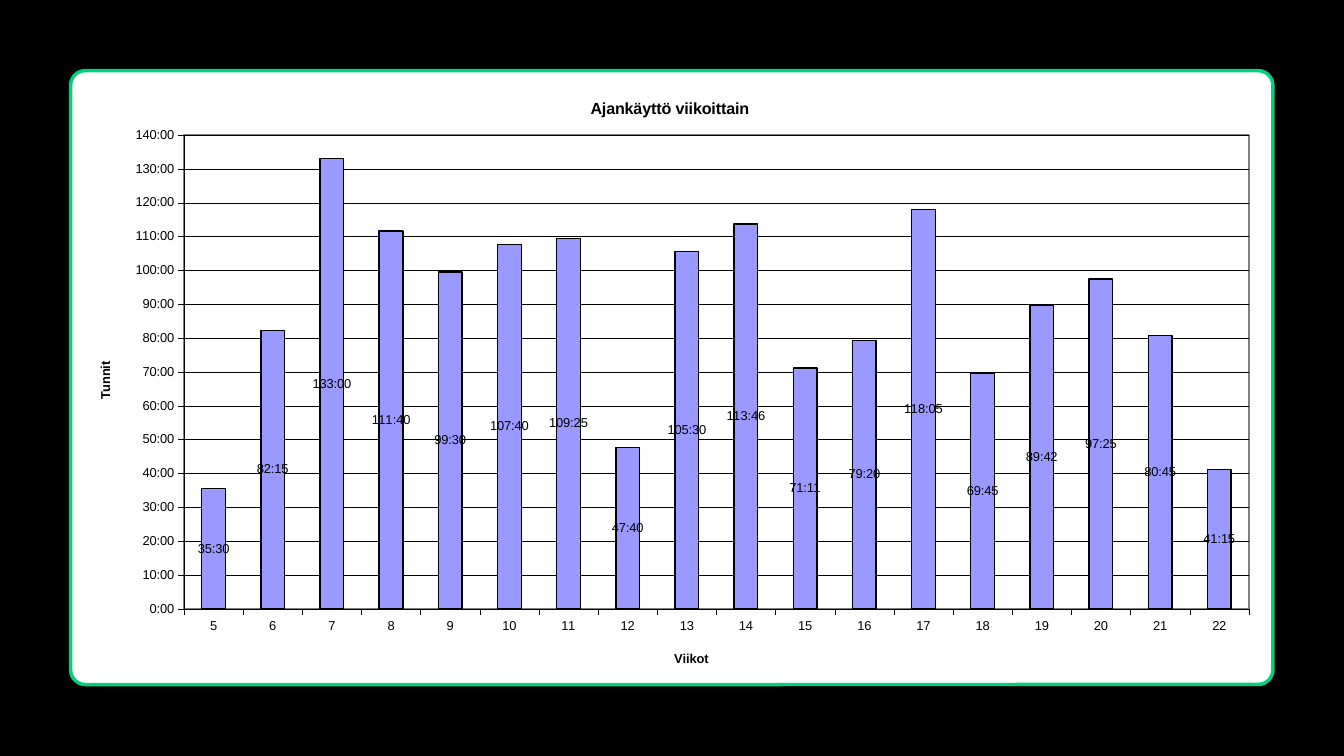
"""Build a slide with a column chart of the hours used each week."""
from typing import NamedTuple

from pptx import Presentation
from pptx.chart.data import CategoryChartData
from pptx.dml.color import RGBColor
from pptx.enum.chart import XL_CHART_TYPE as ChartType, XL_TICK_MARK as TickMark
from pptx.enum.shapes import MSO_SHAPE as Preset
from pptx.oxml import parse_xml
from pptx.oxml.ns import nsdecls, qn
from pptx.util import Cm, Pt

BLACK = "000000"
FRAME = (Cm(1.78), Cm(1.78), Cm(30.3), Cm(15.47))
HOUR_FORMAT = "[h]:mm"
TEXT_SIZE = 9.2
TIMES = (
    "35:30 82:15 133:00 111:40 99:30 107:40 109:25 47:40 105:30 "
    "113:46 71:11 79:20 118:05 69:45 89:42 97:25 80:45 41:15"
).split()
FIRST_WEEK = 5


class Heading(NamedTuple):
    text: str
    size: float
    left: float
    top: float
    rotation: int = 0


CHART_HEADING = Heading("Ajankäyttö viikoittain", 11.5, 0.43, 0.04)
WEEK_HEADING = Heading("Viikot", TEXT_SIZE, 0.5, 0.94)
HOUR_HEADING = Heading("Tunnit", TEXT_SIZE, 0.02, 0.47, -90)


def color(value: str) -> RGBColor:
    return RGBColor.from_string(value)


def days(time: str) -> float:
    hours, minutes = map(int, time.split(":"))
    return round((hours + minutes / 60) / 24, 6)


def style_font(font, size: float, bold: bool = False) -> None:
    font.name, font.size, font.bold = "Arial", Pt(size), bold
    font.color.rgb = color(BLACK)


def style_line(line, value: str, width: float) -> None:
    line.color.rgb = color(value)
    line.width = Pt(width)


def manual_layout(settings: dict[str, str | float]):
    entries = "".join(f'<c:{name} val="{value}"/>' for name, value in settings.items())
    return parse_xml(
        f'<c:layout {nsdecls("c")}><c:manualLayout>{entries}</c:manualLayout></c:layout>'
    )


def clear_layout(element) -> None:
    for layout in element.findall(qn("c:layout")):
        element.remove(layout)


def write_heading(title, heading: Heading) -> None:
    frame = title.text_frame
    frame.text = heading.text
    style_font(frame.paragraphs[0].font, heading.size, True)
    frame._txBody.bodyPr.set("rot", str(heading.rotation * 60000))
    element = title._element
    clear_layout(element)
    settings = {"xMode": "edge", "yMode": "edge", "x": heading.left, "y": heading.top}
    element.find(qn("c:tx")).addnext(manual_layout(settings))


def style_axis(axis, heading: Heading) -> None:
    write_heading(axis.axis_title, heading)
    style_font(axis.tick_labels.font, TEXT_SIZE)
    style_line(axis.format.line, BLACK, 0.25)
    axis.major_tick_mark, axis.minor_tick_mark = TickMark.OUTSIDE, TickMark.NONE


def style_hour_axis(axis) -> None:
    style_axis(axis, HOUR_HEADING)
    axis.minimum_scale, axis.maximum_scale = 0, 140 / 24
    axis.major_unit = 10 / 24
    axis.has_major_gridlines = True
    style_line(axis.major_gridlines.format.line, BLACK, 0.25)
    axis.tick_labels.number_format = HOUR_FORMAT
    axis.tick_labels.number_format_is_linked = False


def style_columns(plot) -> None:
    plot.gap_width, plot.overlap, plot.vary_by_categories = 150, 100, False
    series = plot.series[0]
    series.format.fill.solid()
    series.format.fill.fore_color.rgb = color("9999FF")
    style_line(series.format.line, BLACK, 1)
    labels = series.data_labels
    labels.show_value = True
    labels.number_format, labels.number_format_is_linked = HOUR_FORMAT, False
    style_font(labels.font, TEXT_SIZE)


def place_plot(chart) -> None:
    area = chart._chartSpace.chart.plotArea
    clear_layout(area)
    settings = {
        "layoutTarget": "inner", "xMode": "edge", "yMode": "edge",
        "x": 0.0943, "y": 0.105, "w": 0.8857, "h": 0.772,
    }
    area.insert(0, manual_layout(settings))
    area.append(parse_xml(
        f'<c:spPr {nsdecls("c", "a")}><a:noFill/><a:ln w="12700"><a:solidFill>'
        '<a:srgbClr val="808080"/></a:solidFill></a:ln></c:spPr>'
    ))


def add_panel(slide) -> None:
    panel = slide.shapes.add_shape(Preset.ROUNDED_RECTANGLE, *FRAME)
    panel.adjustments[0] = 0.024
    panel.shadow.inherit = False
    panel.fill.solid()
    panel.fill.fore_color.rgb = color("FFFFFF")
    style_line(panel.line, "01D17D", 2.5)


def add_hours_chart(slide) -> None:
    data = CategoryChartData(number_format=HOUR_FORMAT)
    data.categories = [str(week) for week in range(FIRST_WEEK, FIRST_WEEK + len(TIMES))]
    data.add_series("Series 1", [days(time) for time in TIMES])
    chart = slide.shapes.add_chart(ChartType.COLUMN_STACKED, *FRAME, data).chart
    style_font(chart.font, TEXT_SIZE)
    chart.has_legend = False
    write_heading(chart.chart_title, CHART_HEADING)
    style_axis(chart.category_axis, WEEK_HEADING)
    style_hour_axis(chart.value_axis)
    style_columns(chart.plots[0])
    place_plot(chart)


def main() -> None:
    presentation = Presentation()
    presentation.slide_width, presentation.slide_height = Cm(33.87), Cm(19.05)
    slide = presentation.slides.add_slide(presentation.slide_layouts[6])
    slide.background.fill.solid()
    slide.background.fill.fore_color.rgb = color(BLACK)
    add_panel(slide)
    add_hours_chart(slide)
    presentation.save("out.pptx")


if __name__ == "__main__":
    main()
